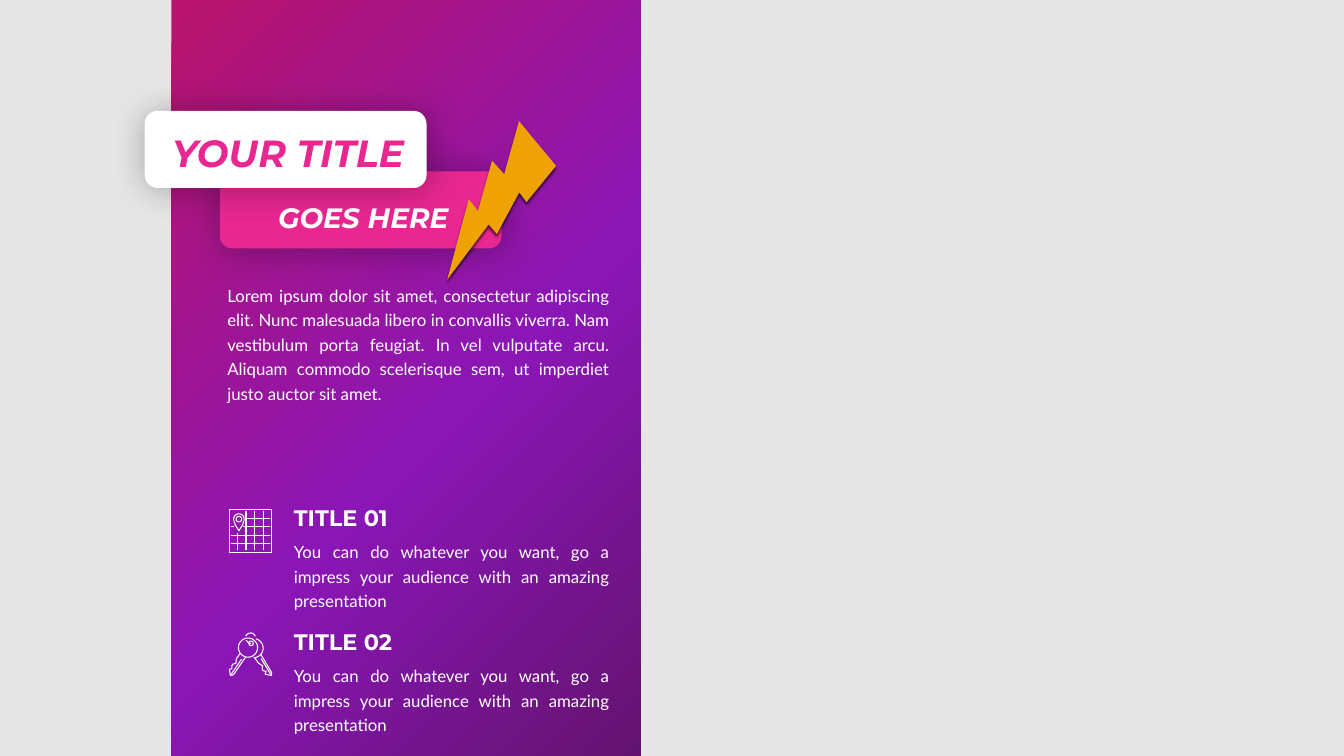
from math import cos, radians, sin

from lxml.etree import SubElement
from pptx import Presentation
from pptx.dml.color import RGBColor
from pptx.enum.shapes import MSO_SHAPE as Shape
from pptx.enum.text import MSO_ANCHOR as Anchor, PP_ALIGN as Align
from pptx.oxml import parse_xml
from pptx.oxml.ns import qn
from pptx.util import Inches, Pt

WHITE, PINK, GOLD, BLACK = "FFFFFF", "E82791", "EFA203", "000000"
BODY = dict(font="Lato", size=24, align=Align.JUSTIFY, spacing=35)
LOREM = ("Lorem ipsum dolor sit amet, consectetur adipiscing elit. Nunc malesuada "
         "libero in convallis viverra. Nam vestibulum porta feugiat. In vel vulputate "
         "arcu. Aliquam commodo scelerisque sem, ut imperdiet justo auctor sit amet.")
ITEM_TEXT = ("You can do whatever you want, go a impress your audience "
             "with an amazing presentation")


def rgb(color):
    return RGBColor.from_string(color)


def write_text(box, text, font="Montserrat", size=32, color=WHITE, bold=False, italic=False,
               align=Align.LEFT, spacing=None, anchor=Anchor.TOP, wrap=True):
    frame = box.text_frame
    frame.word_wrap = wrap
    frame.vertical_anchor = anchor
    para = frame.paragraphs[0]
    para.alignment = align
    if spacing:
        para.line_spacing = Pt(spacing)
    span = para.add_run()
    span.text = text
    span.font.name = font
    span.font.size = Pt(size)
    span.font.bold = bold
    span.font.italic = italic
    span.font.color.rgb = rgb(color)


deck = Presentation()
deck.slide_width, deck.slide_height = Inches(26.66), Inches(15)
page = deck.slides.add_slide(deck.slide_layouts[5])
page.background.fill.solid()
page.background.fill.fore_color.rgb = rgb("E7E6E6")
shapes = page.shapes

# Gradient panel
panel = shapes.add_shape(Shape.RECTANGLE, Inches(3.4), 0, Inches(9.31), Inches(15))
panel.shadow.inherit = False
panel.line.fill.background()
panel.fill.gradient()
gradient = panel.element.spPr.find(qn("a:gradFill"))
stops = "".join(f'<a:gs pos="{percent * 1000}"><a:srgbClr val="{color}"/></a:gs>'
                for percent, color in [(0, "63136F"), (43, "8A16B6"), (98, "B8146E")])
gradient.getparent().replace(gradient, parse_xml(
    '<a:gradFill xmlns:a="http://schemas.openxmlformats.org/drawingml/2006/main" '
    f'rotWithShape="1"><a:gsLst>{stops}</a:gsLst>'
    '<a:path path="circle"><a:fillToRect l="100000" t="100000"/></a:path></a:gradFill>'))

# Introduction and numbered items
intro = shapes.add_textbox(Inches(4.41), Inches(5.53), Inches(7.77), Inches(2.52))
write_text(intro, LOREM, **BODY)
for index, heading in enumerate(["TITLE 01", "TITLE 02"]):
    top = 9.94 + index * 2.46
    box = shapes.add_textbox(Inches(5.73), Inches(top), Inches(2.2), Inches(0.64))
    write_text(box, heading, bold=True, anchor=Anchor.MIDDLE, wrap=False)
    box = shapes.add_textbox(Inches(5.73), Inches(top + 0.68), Inches(6.45), Inches(1.51))
    write_text(box, ITEM_TEXT, **BODY)

# Icon strokes: lists of points, or arcs as (centre x, centre y, radius, start, end) in degrees
map_strokes = [
    [(4.55, 10.11), (5.39, 10.11), (5.39, 10.96), (4.55, 10.96), (4.55, 10.11)],
    [(4.72, 10.57), (4.72, 10.92)],
    *[[(x, 10.14), (x, 10.92)] for x in (4.88, 5.05, 5.22)],
    [(4.88, 10.28), (5.36, 10.28)],
    [(4.58, 10.45), (4.65, 10.45)],
    [(4.83, 10.45), (5.36, 10.45)],
    *[[(4.58, y), (5.36, y)] for y in (10.62, 10.79)],
    (4.74, 10.3, 0.055, 0, 360),
    (4.74, 10.3, 0.105, 165, 375),
    [(4.64, 10.33), (4.67, 10.42), (4.74, 10.53), (4.81, 10.42), (4.84, 10.33)],
]
key_strokes = [
    (4.92, 12.85, 0.19, 0, 360),
    (4.98, 12.765, 0.045, 0, 360),
    (5.03, 12.86, 0.19, -75, 90),
    (4.97, 12.66, 0.1, 200, 340),
    [(4.88, 12.7), (4.94, 12.76), (4.98, 12.77)],
    [(4.76, 12.97), (4.69, 13.07), (4.68, 13.16), (4.62, 13.18), (4.6, 13.21), (4.6, 13.27),
     (4.55, 13.28), (4.57, 13.4), (4.63, 13.39), (4.87, 13.04)],
    [(4.79, 13.08), (4.58, 13.39)],
    [(5.05, 13.05), (5.13, 13.16), (5.21, 13.21), (5.2, 13.27), (5.22, 13.31), (5.28, 13.32),
     (5.26, 13.38), (5.38, 13.4), (5.39, 13.35), (5.17, 12.98)],
    [(5.18, 13.07), (5.37, 13.38)],
]
for strokes in (map_strokes, key_strokes):
    builder = shapes.build_freeform(4550, strokes[0][1] * 1000 if isinstance(strokes[0], tuple)
                                    else strokes[0][0][1] * 1000, scale=Inches(1) / 1000)
    for stroke in strokes:
        if isinstance(stroke, tuple):
            x, y, radius, start, end = stroke
            angles = [radians(start + (end - start) * step / 24) for step in range(25)]
            stroke = [(x + radius * cos(angle), y + radius * sin(angle)) for angle in angles]
        points = [(x * 1000, y * 1000) for x, y in stroke]
        builder.move_to(*points[0])
        builder.add_line_segments(points[1:], close=False)
    icon = builder.convert_to_shape()
    icon.shadow.inherit = False
    icon.fill.background()
    icon.line.color.rgb = rgb(WHITE)
    icon.line.width = Pt(1.5)

# Title plates and lightning bolt; shadow is opacity %, blur, distance, angle
plate_shadow = (31, 50.4, 3, 45)
decorations = [
    (Shape.ROUNDED_RECTANGLE, 4.36, 3.4, 5.59, 1.53, 0, PINK, plate_shadow),
    (Shape.ROUNDED_RECTANGLE, 2.87, 2.2, 5.59, 1.53, 0, WHITE, plate_shadow),
    (Shape.LIGHTNING_BOLT, 8.48, 2.58, 2.67, 2.67, 75, GOLD, (64, 4, 4, 90)),
]
for kind, left, top, width, height, turn, color, shadow in decorations:
    shape = shapes.add_shape(kind, Inches(left), Inches(top), Inches(width), Inches(height))
    shape.rotation = turn
    shape.fill.solid()
    shape.fill.fore_color.rgb = rgb(color)
    shape.line.fill.background()
    shape.shadow.inherit = False
    opacity, blur, distance, angle = shadow
    outer = SubElement(shape.element.spPr.find(qn("a:effectLst")), qn("a:outerShdw"),
                       blurRad=str(Pt(blur)), dist=str(Pt(distance)),
                       dir=str(angle * 60000), algn="ctr", rotWithShape="0")
    tint = SubElement(outer, qn("a:srgbClr"), val=BLACK)
    SubElement(tint, qn("a:alpha"), val=str(opacity * 1000))
    if color == PINK:
        subtitle = shapes.add_textbox(Inches(4.58), Inches(3.92), Inches(5.25), Inches(0.77))
        write_text(subtitle, "GOES HERE", size=40, bold=True, italic=True, align=Align.CENTER)
    elif color == WHITE:
        title = shapes.title
        title.left, title.top = Inches(3.09), Inches(2.53)
        title.width, title.height = Inches(5.25), Inches(1.01)
        write_text(title, "YOUR TITLE", size=54, color=PINK, bold=True, italic=True,
                   align=Align.CENTER)
        shape.element.addnext(title.element)

deck.save("out.pptx")
